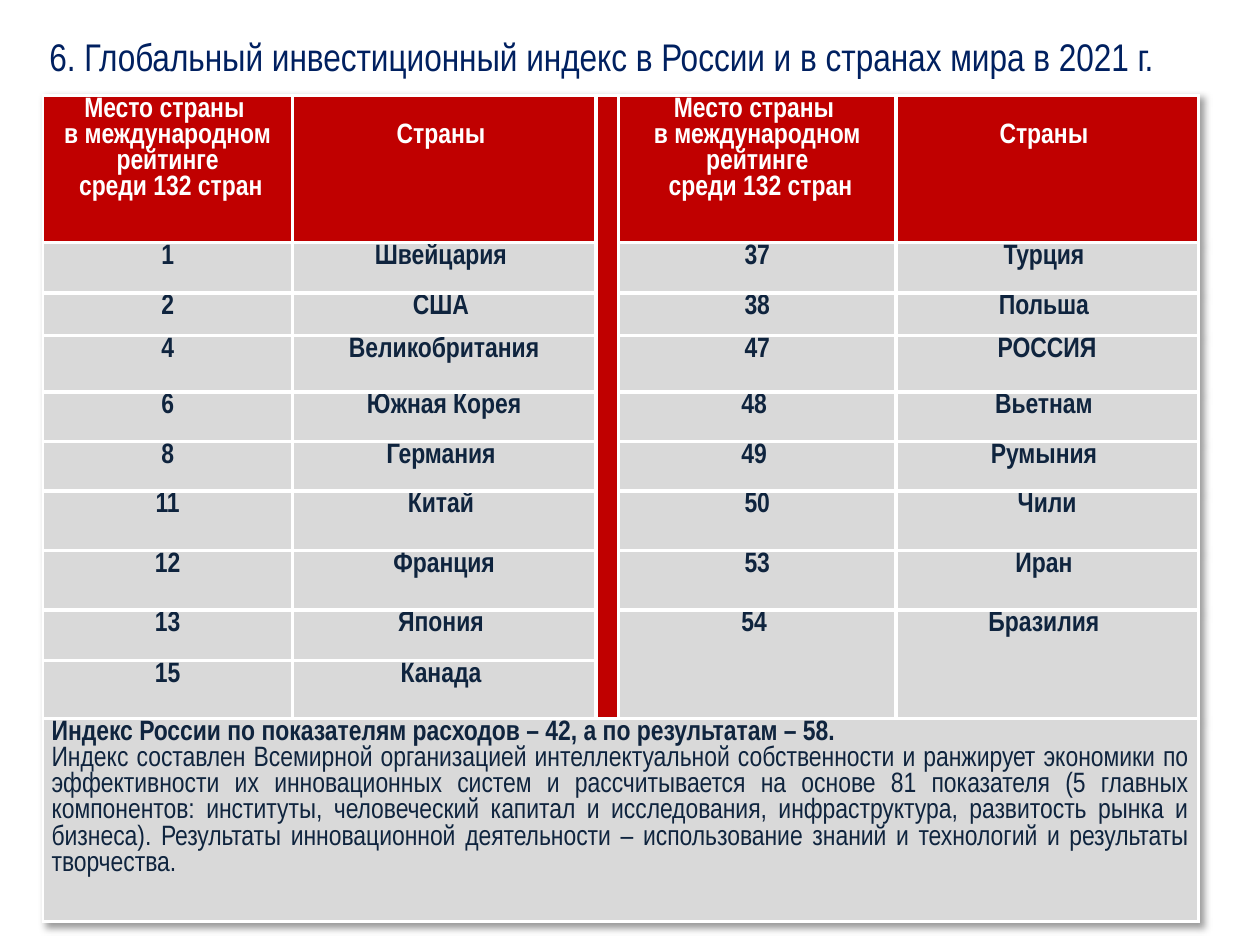
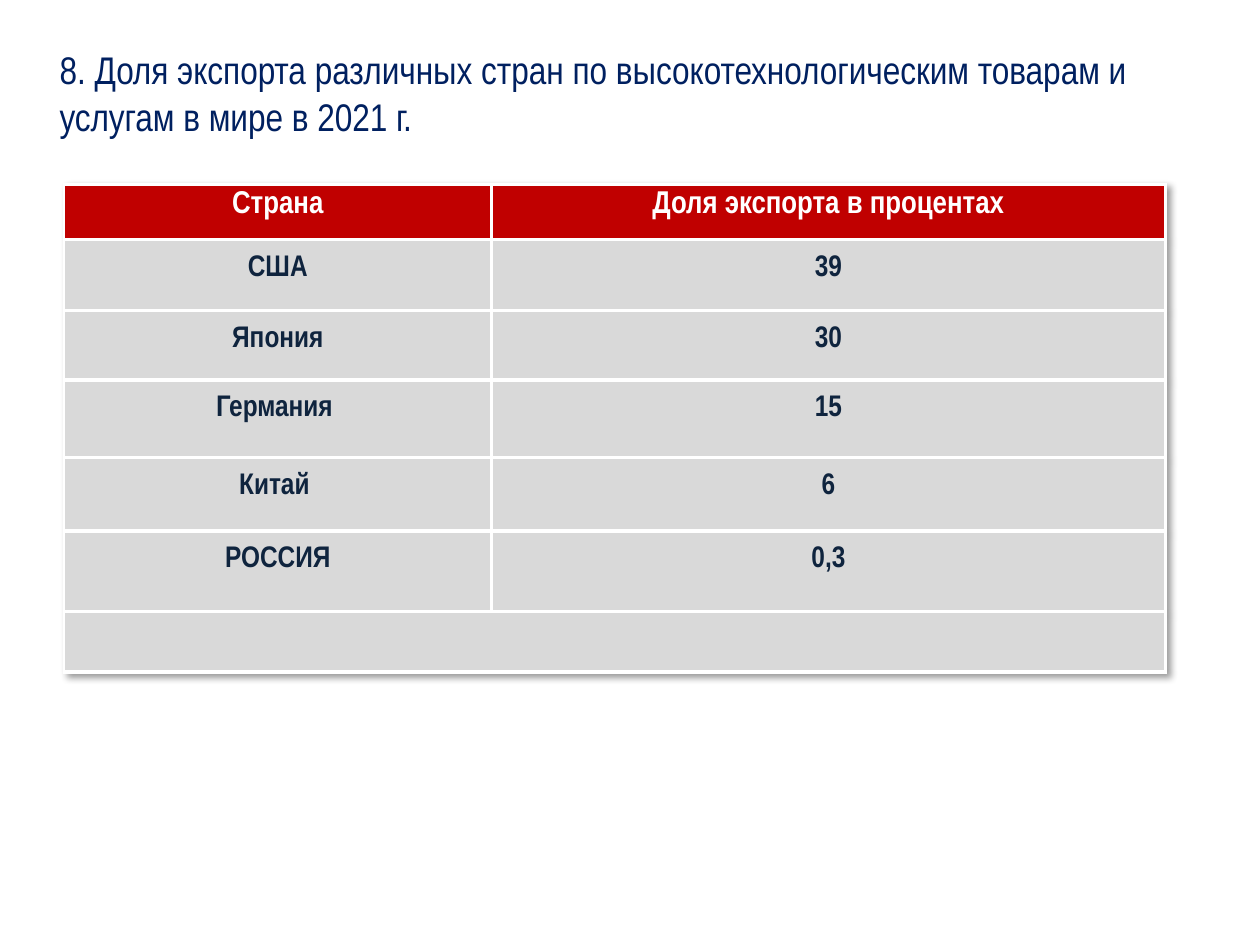
from lxml import etree
from pptx import Presentation
from pptx.dml.color import RGBColor
from pptx.enum.text import MSO_ANCHOR, MSO_AUTO_SIZE, PP_ALIGN
from pptx.oxml import parse_xml
from pptx.oxml.ns import qn
from pptx.util import Pt

LEFT, CENTER, JUSTIFY = PP_ALIGN.LEFT, PP_ALIGN.CENTER, PP_ALIGN.JUSTIFY
MIDDLE, TOP = MSO_ANCHOR.MIDDLE, MSO_ANCHOR.TOP
NO_AUTOFIT = MSO_AUTO_SIZE.NONE
DRAWING = "http://schemas.openxmlformats.org/drawingml/2006/main"

NAVY, INK, WHITE = "002060", "0F243E", "FFFFFF"
RED, GRAY = "C00000", "D9D9D9"

TABLE_SHADOW = (
    f'<a:effectLst xmlns:a="{DRAWING}">'
    '<a:outerShdw blurRad="50800" dist="38100" dir="2700000" algn="tl" rotWithShape="0">'
    '<a:srgbClr val="000000"><a:alpha val="40000"/></a:srgbClr>'
    '</a:outerShdw></a:effectLst>'
)

RANK_HEADING = ["Место страны ", "в международном рейтинге", " среди 132 стран"]
RANKING = [
    ("1", "Швейцария ", "37", "Турция "),
    ("2", "США ", "38", "Польша "),
    ("4", "Великобритания", "47", "РОССИЯ"),
    ("6", "Южная Корея", "48 ", "Вьетнам "),
    ("8", "Германия ", "49 ", "Румыния "),
    ("11", "Китай ", "50", "Чили"),
    ("12", "Франция", "53", "Иран "),
    ("13", "Япония ", "54 ", "Бразилия "),
    ("15", "Канада "),
]
INDEX_SUMMARY = "Индекс России по показателям расходов – 42, а по результатам – 58. "
INDEX_METHOD = (
    "Индекс составлен Всемирной организацией интеллектуальной собственности и ранжирует "
    "экономики по эффективности их инновационных систем и рассчитывается на основе "
    "81 показателя (5 главных компонентов: институты, человеческий капитал и исследования, "
    "инфраструктура, развитость рынка и бизнеса). Результаты инновационной деятельности – "
    "использование знаний и технологий и результаты творчества. "
)
EXPORT_SHARES = [
    ("США", "39"),
    ("Япония", "30"),
    ("Германия ", "15"),
    ("Китай ", "6"),
    ("РОССИЯ", "0,3"),
]


def color(hex_string):
    return RGBColor.from_string(hex_string)


class SlideBuilder:
    def __init__(self, deck, font="Arial Narrow"):
        self.deck = deck
        self.font = font
        self.slide = None

    def new_slide(self):
        self.slide = self.deck.slides.add_slide(self.deck.slide_layouts[5])

    def style(self, para, size, hex_color, bold=False, align=CENTER):
        para.alignment = align
        para.font.name = self.font
        para.font.size = Pt(size)
        para.font.bold = bold
        para.font.color.rgb = color(hex_color)

    def title(self, lines, left, top, width, height):
        box = self.slide.shapes.title
        box.left, box.top, box.width, box.height = map(Pt, (left, top, width, height))
        frame = box.text_frame
        frame.auto_size = NO_AUTOFIT
        frame.vertical_anchor = MIDDLE
        frame.text = "\n".join(lines)
        for para in frame.paragraphs:
            self.style(para, 22, NAVY, align=LEFT)
            properties = para._p.get_or_add_pPr()
            properties.set("marL", "0")
            properties.set("indent", str(Pt(35.4)))

    def table(self, left, top, widths, heights):
        """Add a gray grid with white rules, a red heading row and a soft shadow."""
        holder = self.slide.shapes.add_table(
            len(heights), len(widths), Pt(left), Pt(top), Pt(sum(widths)), Pt(sum(heights)))
        table = holder.table
        table.first_row = table.horz_banding = False
        table._tbl.tblPr.insert(0, parse_xml(TABLE_SHADOW))
        for column, width in zip(table.columns, widths):
            column.width = Pt(width)
        for row_index, (row, height) in enumerate(zip(table.rows, heights)):
            row.height = Pt(height)
            for column_index, cell in enumerate(row.cells):
                self.borders(cell, left_width=2.25 if column_index else 1)
                cell.fill.solid()
                cell.fill.fore_color.rgb = color(GRAY if row_index else RED)
                cell.margin_left = cell.margin_right = Pt(5)
                cell.margin_top, cell.margin_bottom = Pt(0.7), 0
                cell.vertical_anchor = TOP
        return table

    def borders(self, cell, left_width):
        properties = cell._tc.get_or_add_tcPr()
        for side, width in (("L", left_width), ("R", 2.25), ("T", 2.25), ("B", 2.25)):
            line = etree.SubElement(properties, qn(f"a:ln{side}"), w=str(Pt(width)))
            fill = etree.SubElement(line, qn("a:solidFill"))
            etree.SubElement(fill, qn("a:srgbClr"), val=WHITE)

    def cell_text(self, cell, lines, size, hex_color, spacing, gap=0, align=CENTER):
        cell.text_frame.text = "\n".join(lines)
        for para in cell.text_frame.paragraphs:
            self.style(para, size, hex_color, bold=True, align=align)
            para.line_spacing = spacing
            para.space_before = para.space_after = Pt(gap)


def build_index_slide(builder):
    builder.new_slide()
    builder.title(["6. Глобальный инвестиционный индекс в России и в странах мира в 2021 г."],
                  -14.4, 15.1, 700.6, 33.8)
    table = builder.table(24.5, 54.7, [142.6, 173.5, 13, 158.4, 172.8],
                          [84, 28.8, 24.3, 32.3, 28.3, 28.3, 34, 34, 28.8, 33.2, 116])
    line = Pt(15)
    note_row = len(RANKING) + 1
    table.cell(0, 2).merge(table.cell(note_row - 1, 2))
    for column in (3, 4):
        table.cell(note_row - 2, column).merge(table.cell(note_row - 1, column))
    table.cell(note_row, 0).merge(table.cell(note_row, 4))

    for rank_column in (0, 3):
        builder.cell_text(table.cell(0, rank_column), RANK_HEADING, 16, WHITE, line)
        country_heading = table.cell(0, rank_column + 1)
        builder.cell_text(country_heading, ["Страны "], 16, WHITE, line)
        country_heading.margin_top = Pt(15.7)
    for row, values in enumerate(RANKING, start=1):
        for column, value in zip((0, 1, 3, 4), values):
            builder.cell_text(table.cell(row, column), [value], 16, INK, line)

    note = table.cell(note_row, 0)
    builder.cell_text(note, [INDEX_SUMMARY, INDEX_METHOD], 16, INK, line, align=JUSTIFY)
    note.text_frame.paragraphs[1].font.bold = False


def build_export_slide(builder):
    builder.new_slide()
    builder.title(["8. Доля экспорта различных стран по высокотехнологическим товарам и",
                   "услугам в мире в 2021 г."], -8.6, 23, 730.8, 59.8)
    table = builder.table(36.7, 105.5, [244.1, 385.2], [31.5, 40.5, 39.7, 44.3, 42, 46, 34.6])
    for column, heading in enumerate(("Страна", "Доля экспорта в процентах")):
        builder.cell_text(table.cell(0, column), [heading], 18, WHITE, 1.15)
    for row, values in enumerate(EXPORT_SHARES, start=1):
        for column, value in enumerate(values):
            builder.cell_text(table.cell(row, column), [value], 17, INK, 1.5, gap=6)
    last_row = len(EXPORT_SHARES) + 1
    table.cell(last_row, 0).merge(table.cell(last_row, 1))


def main():
    deck = Presentation()
    deck.slide_width, deck.slide_height = Pt(720), Pt(540)
    builder = SlideBuilder(deck)
    build_index_slide(builder)
    build_export_slide(builder)
    deck.save("out.pptx")


if __name__ == "__main__":
    main()
